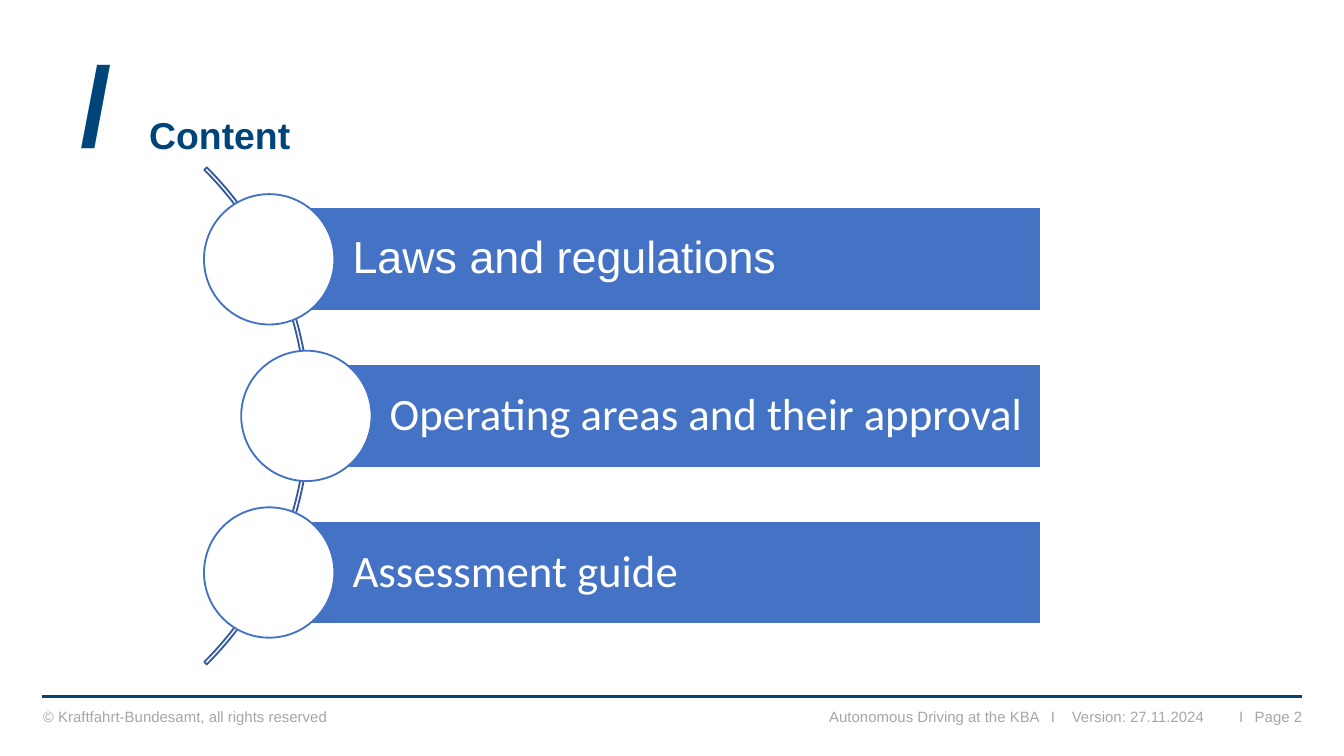
import dataclasses
import math

import pptx
import pptx.dml.color
import pptx.enum.shapes
import pptx.enum.text
import pptx.oxml.ns
import pptx.util
from lxml import etree

Inches = pptx.util.Inches
Pt = pptx.util.Pt
Shape = pptx.enum.shapes.MSO_SHAPE
Align = pptx.enum.text.PP_ALIGN
Anchor = pptx.enum.text.MSO_ANCHOR


@dataclasses.dataclass(frozen=True)
class Theme:
    navy: str = "004579"
    blue: str = "4472C4"
    arc: str = "365B9D"
    grey: str = "A6A6A6"
    white: str = "FFFFFF"
    font: str = "Arial"
    item_font: str = "Calibri"
    slash_size: int = 60
    item_size: int = 24
    title_size: int = 20
    footer_size: int = 8


THEME = Theme()


def rgb(value):
    return pptx.dml.color.RGBColor.from_string(value)


def write(holder, text, size, color, bold=False, font=THEME.font,
          align=Align.LEFT, anchor=Anchor.TOP, margins=(0, 0, 0, 0), before=7.5):
    frame = holder.text_frame
    frame.text = text
    frame.word_wrap = True
    frame.auto_size = pptx.enum.text.MSO_AUTO_SIZE.NONE
    frame.vertical_anchor = anchor
    (frame.margin_left, frame.margin_top,
     frame.margin_right, frame.margin_bottom) = map(Inches, margins)
    paragraph = frame.paragraphs[0]
    paragraph.alignment = align
    paragraph.line_spacing = 0.9
    paragraph.space_before = Pt(before)
    run_font = paragraph.runs[0].font
    run_font.name = font
    run_font.size = Pt(size)
    run_font.bold = bold
    run_font.color.rgb = rgb(color)


def add_outlined(slide, preset, box, fill, line, width):
    shape = slide.shapes.add_shape(preset, *map(Inches, box))
    shape.shadow.inherit = False
    if fill:
        shape.fill.solid()
        shape.fill.fore_color.rgb = rgb(fill)
    else:
        shape.fill.background()
    shape.line.color.rgb = rgb(line)
    shape.line.width = Pt(width)
    return shape


def add_heading(slide, box, text):
    left, top, width, height = box
    slash = slide.shapes.add_textbox(*map(Inches, (left, top, 0.42, 0.72)))
    write(slash, "/", THEME.slash_size, THEME.navy, bold=True)
    title = slide.shapes.title
    title.left, title.top = Inches(left + 0.51), Inches(top + 0.5)
    title.width, title.height = Inches(width - 0.51), Inches(height - 0.5)
    write(title, text, THEME.title_size, THEME.navy, bold=True)


def add_agenda(slide, box, items):
    left, top, width, height = box
    radius = height / 2
    middle = top + radius
    center_x = left - 1.83
    pitch, bar_height, circle, arc_width = 1.165, 0.78, 0.97, 0.025

    arc = add_outlined(slide, Shape.BLOCK_ARC,
                       (center_x - radius, top, height, height),
                       None, THEME.arc, 1)
    arc.adjustments[0] = 189
    arc.adjustments[1] = 27
    arc.adjustments[2] = 0.005

    for index, (label, font) in enumerate(items):
        offset = (index - (len(items) - 1) / 2) * pitch
        x = center_x + math.sqrt((radius - arc_width) ** 2 - offset ** 2)
        y = middle + offset
        bar = add_outlined(slide, Shape.RECTANGLE,
                           (x, y - bar_height / 2, left + width - x, bar_height),
                           THEME.blue, THEME.white, 1.5)
        write(bar, label, THEME.item_size, THEME.white, font=font,
              anchor=Anchor.MIDDLE, margins=(0.62, 0.07, 0.07, 0.07), before=0)
        add_outlined(slide, Shape.OVAL,
                     (x - circle / 2, y - circle / 2, circle, circle),
                     THEME.white, THEME.blue, 1)


def add_footer(slide, box, entries):
    left, top, width, height = box
    rule = slide.shapes.add_connector(
        pptx.enum.shapes.MSO_CONNECTOR.STRAIGHT,
        Inches(left), Inches(top), Inches(left + width), Inches(top))
    rule.line.color.rgb = rgb(THEME.navy)
    rule.line.width = Pt(1.5)
    etree.SubElement(rule._element.spPr, pptx.oxml.ns.qn("a:effectLst"))
    for text, offset, entry_width, align in entries:
        entry = slide.shapes.add_textbox(
            Inches(left + offset), Inches(top + 0.08),
            Inches(entry_width), Inches(height - 0.08))
        write(entry, text, THEME.footer_size, THEME.grey,
              align=align, anchor=Anchor.MIDDLE)


def main():
    deck = pptx.Presentation()
    deck.slide_width = Inches(10)
    deck.slide_height = Inches(10 * 9 / 16)
    slide = deck.slides.add_slide(deck.slide_layouts[5])

    add_footer(slide, (0.31, 5.18, 9.38, 0.24), [
        ("© Kraftfahrt-Bundesamt, all rights reserved", 0.01, 3.06, Align.LEFT),
        ("Autonomous Driving at the KBA", 3.01, 4.42, Align.RIGHT),
        ("I", 7.5, 0.05, Align.CENTER),
        ("Version: 27.11.2024", 7.58, 1.07, Align.RIGHT),
        ("I", 8.9, 0.05, Align.CENTER),
        ("Page 2", 8.98, 0.4, Align.RIGHT),
    ])
    add_heading(slide, (0.6, 0.37, 9.06, 0.78), "Content")
    add_agenda(slide, (1.52, 0.48, 6.23, 5.23), [
        ("Laws and regulations", THEME.font),
        ("Operating areas and their approval", THEME.item_font),
        ("Assessment guide", THEME.item_font),
    ])
    deck.save("out.pptx")


if __name__ == "__main__":
    main()
